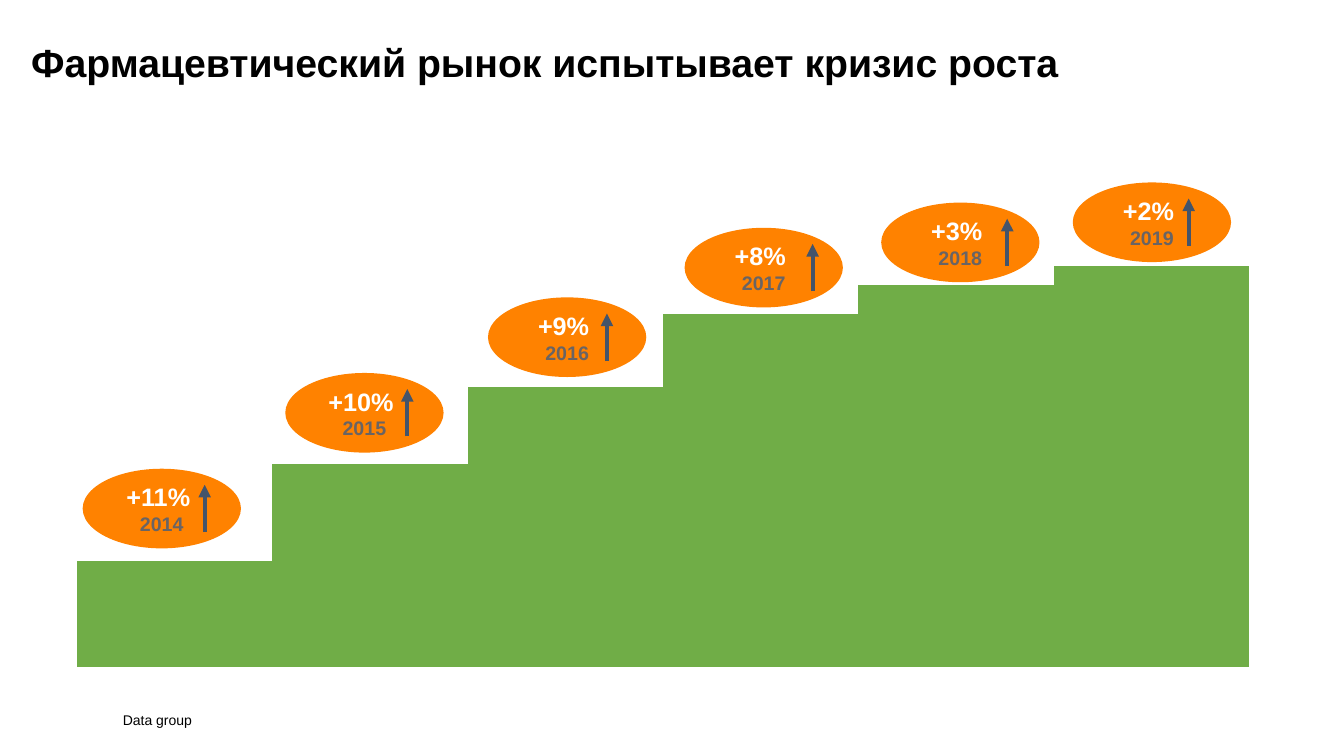
from lxml import etree
from pptx import Presentation
from pptx.chart.data import CategoryChartData
from pptx.dml.color import RGBColor
from pptx.enum.chart import XL_CHART_TYPE
from pptx.enum.shapes import MSO_CONNECTOR, MSO_SHAPE
from pptx.enum.text import MSO_ANCHOR, PP_ALIGN
from pptx.oxml import parse_xml
from pptx.oxml.ns import nsdecls, qn
from pptx.util import Inches, Pt

STACKED = XL_CHART_TYPE.COLUMN_STACKED_100
OVAL = MSO_SHAPE.OVAL
STRAIGHT = MSO_CONNECTOR.STRAIGHT
MIDDLE = MSO_ANCHOR.MIDDLE
LEFT, CENTER = PP_ALIGN.LEFT, PP_ALIGN.CENTER

TITLE = "Фармацевтический рынок испытывает кризис роста"
SOURCE = "Data group"
LEVELS = [22, 42, 58, 73, 79, 83]
STEPS = [
    ("+11% ", "2014", 0.82, 4.65, 2.03),
    ("+10% ", "2015", 2.83, 3.7, 4.04),
    ("+9% ", "2016", 4.84, 2.95, 6.02),
    ("+8% ", "2017", 6.79, 2.26, 8.06),
    ("+3% ", "2018", 8.74, 2.01, 9.99),
    ("+2% ", "2019", 10.64, 1.81, 11.79),
]
OVAL_SIZE = (1.57, 0.79)
ARROW_TOP, ARROW_BOTTOM = 0.16, 0.63
PLOT_LAYOUT = {"x": 0.02, "y": 0.02, "w": 0.96, "h": 0.96}

TITLE_FONT = {"name": "Arial", "size": Pt(28), "bold": True}
SOURCE_FONT = {"name": "Arial", "size": Pt(10)}
GROWTH_FONT = {"name": "Arial", "size": Pt(18), "bold": True}
YEAR_FONT = {"name": "Arial", "size": Pt(14), "bold": True}
CHART_FONT = {"name": "Calibri", "size": Pt(10)}


def color(value):
    return RGBColor.from_string(value)


def style(font, values, hue):
    for name, value in values.items():
        setattr(font, name, value)
    font.color.rgb = color(hue)


def write(para, text, values, hue, align):
    para.alignment = align
    span = para.add_run()
    span.text = text
    style(span.font, values, hue)


def add_title(page):
    title = page.shapes.title
    title.left, title.top, title.width, title.height = map(Inches, (0.21, 0.33, 12.83, 0.57))
    frame = title.text_frame
    frame.word_wrap = True
    frame.vertical_anchor = MIDDLE
    write(frame.paragraphs[0], TITLE, TITLE_FONT, "000000", LEFT)


def add_source(page):
    box = page.shapes.add_textbox(*map(Inches, (1.12, 7.01, 5.23, 0.27)))
    box.text_frame.word_wrap = True
    write(box.text_frame.paragraphs[0], SOURCE, SOURCE_FONT, "000000", LEFT)


def add_staircase(page):
    data = CategoryChartData()
    data.categories = [str(number) for number in range(1, len(LEVELS) + 1)]
    data.add_series("Series 1", LEVELS)
    data.add_series("Series 2", [100 - level for level in LEVELS])
    place = map(Inches, (0.52, 1.72, 12.11, 5))
    chart = page.shapes.add_chart(STACKED, *place, data).chart
    chart.has_legend = False
    chart.has_title = False
    style(chart.font, CHART_FONT, "000000")
    for axis in (chart.category_axis, chart.value_axis):
        axis.visible = False
        axis.has_major_gridlines = False

    plot = chart.plots[0]
    plot.gap_width = 0
    plot.overlap = 100
    plot.vary_by_categories = False
    growth, rest = plot.series
    growth.format.fill.solid()
    growth.format.fill.fore_color.rgb = color("70AD47")
    rest.format.fill.background()
    for series in plot.series:
        series.format.line.fill.background()

    area = chart.element.find(".//" + qn("c:plotArea"))
    for old in area.findall(qn("c:layout")):
        area.remove(old)
    sizes = "".join(f'<c:{key} val="{value}"/>' for key, value in PLOT_LAYOUT.items())
    area.insert(0, parse_xml(
        f'<c:layout {nsdecls("c")}><c:manualLayout><c:layoutTarget val="inner"/>'
        f'<c:xMode val="edge"/><c:yMode val="edge"/>{sizes}</c:manualLayout></c:layout>'))


def add_oval(page, growth, year, left, top):
    oval = page.shapes.add_shape(OVAL, *map(Inches, (left, top, *OVAL_SIZE)))
    oval.shadow.inherit = False
    oval.fill.solid()
    oval.fill.fore_color.rgb = color("FF8200")
    oval.line.fill.background()
    frame = oval.text_frame
    frame.word_wrap = True
    frame.vertical_anchor = MIDDLE
    write(frame.paragraphs[0], growth, GROWTH_FONT, "FFFFFF", CENTER)
    write(frame.add_paragraph(), year, YEAR_FONT, "696464", CENTER)


def add_arrow(page, x, top):
    ends = (x, top + ARROW_BOTTOM, x, top + ARROW_TOP)
    arrow = page.shapes.add_connector(STRAIGHT, *map(Inches, ends))
    arrow.line.color.rgb = color("44546A")
    arrow.line.width = Pt(3)
    etree.SubElement(arrow.line._get_or_add_ln(), qn("a:tailEnd"), type="triangle")
    etree.SubElement(arrow._element.spPr, qn("a:effectLst"))


def main():
    deck = Presentation()
    deck.slide_width, deck.slide_height = Inches(13.33), Inches(7.5)
    page = deck.slides.add_slide(deck.slide_layouts[5])
    add_title(page)
    add_source(page)
    add_staircase(page)
    for growth, year, left, top, arrow_x in STEPS:
        add_oval(page, growth, year, left, top)
        add_arrow(page, arrow_x, top)
    deck.save("out.pptx")


if __name__ == "__main__":
    main()
